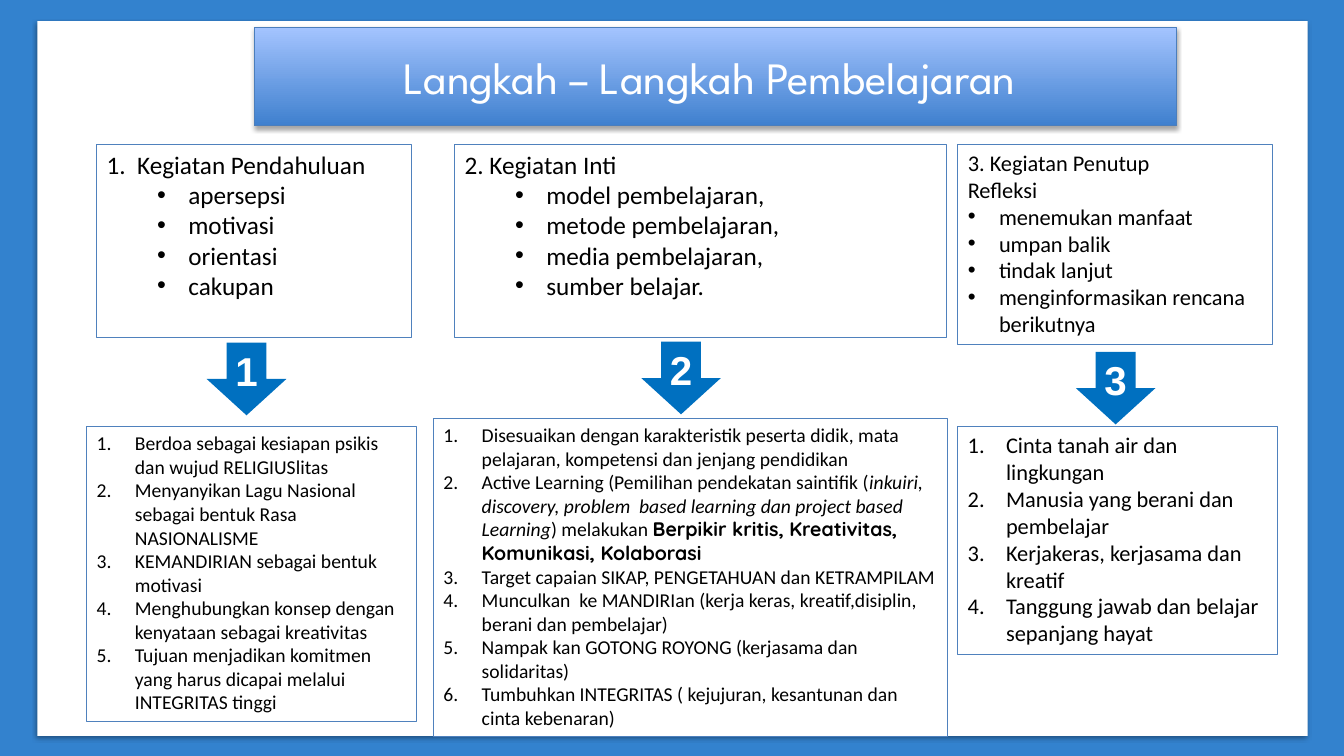
from dataclasses import dataclass

from lxml.etree import SubElement
from pptx import Presentation
from pptx.dml.color import RGBColor
from pptx.enum.shapes import MSO_SHAPE
from pptx.enum.text import MSO_ANCHOR, MSO_AUTO_SIZE, PP_ALIGN
from pptx.oxml.ns import qn
from pptx.util import Inches, Pt


@dataclass(frozen=True)
class Theme:
    back: str = "3382CE"
    white: str = "FFFFFF"
    black: str = "000000"
    edge: str = "4F81BD"
    arrow: str = "0070C0"
    low: str = "3F80CE"
    high: str = "A4C4FF"
    rim: str = "4B7EBC"
    body: str = "Calibri"
    head: str = "League Spartan"
    digit: str = "Arial"
    accent: str = "Quicksand"
    title: float = 32
    number: float = 28.8
    large: float = 18
    medium: float = 16
    small: float = 14
    thin: float = 0.75


THEME = Theme()
BULLET, NUMBER = "buChar", "buAutoNum"

# Each step: arrow place, then two boxes as (place, size, plain lines, items, mark, indent)
STEPS = [
    ((2.05, 3.4), [
        ((0.96, 1.43, 3.12, 1.92), THEME.large, ["1.  Kegiatan Pendahuluan"],
         ["apersepsi", "motivasi", "orientasi", "cakupan"], BULLET, 0.81),
        ((0.86, 4.23, 3.27, 2.93), THEME.small, [],
         ["Berdoa sebagai kesiapan psikis dan wujud RELIGIUSlitas",
          "Menyanyikan Lagu Nasional sebagai bentuk Rasa NASIONALISME",
          "KEMANDIRIAN sebagai bentuk motivasi",
          "Menghubungkan konsep dengan kenyataan sebagai kreativitas",
          "Tujuan menjadikan komitmen yang harus dicapai melalui "
          "INTEGRITAS tinggi"], NUMBER, 0.38),
    ]),
    ((6.36, 3.39), [
        ((4.51, 1.43, 4.88, 1.92), THEME.large, ["2. Kegiatan Inti"],
         ["model pembelajaran,", "metode pembelajaran,",
          "media pembelajaran,", "sumber belajar."], BULLET, 0.81),
        ((4.3, 4.15, 5.1, 3.16), THEME.small, [],
         ["Disesuaikan dengan karakteristik peserta didik, mata pelajaran, "
          "kompetensi dan jenjang pendidikan",
          [("Active Learning (Pemilihan pendekatan saintifik (", ""),
           ("inkuiri, discovery, problem  based learning dan project based "
            "Learning", "italic"),
           (") melakukan ", ""),
           ("Berpikir kritis, Kreativitas, Komunikasi, Kolaborasi", "accent")],
          "Target capaian SIKAP, PENGETAHUAN dan KETRAMPILAM",
          "Munculkan  ke MANDIRIan (kerja keras, kreatif,disiplin, berani "
          "dan pembelajar)",
          "Nampak kan GOTONG ROYONG (kerjasama dan solidaritas)",
          "Tumbuhkan INTEGRITAS ( kejujuran, kesantunan dan cinta "
          "kebenaran)"], NUMBER, 0.38),
    ]),
    ((10.67, 3.49), [
        ((9.5, 1.43, 3.12, 1.99), THEME.medium,
         ["3. Kegiatan Penutup", "Refleksi"],
         ["menemukan manfaat", "umpan balik", "tindak lanjut",
          "menginformasikan rencana berikutnya"], BULLET, 0.31),
        ((9.5, 4.23, 3.17, 2.26), THEME.medium, [],
         ["Cinta tanah air dan lingkungan",
          "Manusia yang berani dan pembelajar",
          "Kerjakeras, kerjasama dan kreatif",
          "Tanggung jawab dan belajar sepanjang hayat"], NUMBER, 0.38),
    ]),
]


def color(code):
    return RGBColor.from_string(code)


def style(font, face, size, code, bold=False):
    font.name = face
    font.size = Pt(size)
    font.color.rgb = color(code)
    font.bold = bold


def outline(shape, code):
    shape.line.color.rgb = color(code)
    shape.line.width = Pt(THEME.thin)


def shade(shape, alpha, dist):
    """Give the shape a soft shadow straight below it."""
    effects = shape._element.spPr.find(qn("a:effectLst"))
    outer = SubElement(effects, qn("a:outerShdw"), blurRad=str(Pt(3.1)),
                       dist=str(Pt(dist)), dir="5400000", rotWithShape="0")
    tint = SubElement(outer, qn("a:srgbClr"), val=THEME.black)
    SubElement(tint, qn("a:alpha"), val=str(alpha * 1000))


def add_form(slide, kind, place):
    shape = slide.shapes.add_shape(kind, *map(Inches, place))
    shape.shadow.inherit = False
    return shape


def label(shape, text, face, size, bold=False):
    frame = shape.text_frame
    frame.vertical_anchor = MSO_ANCHOR.MIDDLE
    frame.text = text
    line = frame.paragraphs[0]
    line.alignment = PP_ALIGN.CENTER
    style(line.runs[0].font, face, size, THEME.white, bold)


def add_sheet(slide):
    sheet = add_form(slide, MSO_SHAPE.RECTANGLE, (0.37, 0.21, 12.6, 7.09))
    sheet.fill.solid()
    sheet.fill.fore_color.rgb = color(THEME.white)
    sheet.line.fill.background()
    shade(sheet, 38, 1.6)


def add_title(slide, text):
    banner = add_form(slide, MSO_SHAPE.RECTANGLE, (2.52, 0.27, 9.15, 0.98))
    banner.fill.gradient()
    banner.fill.gradient_angle = 90
    for stop, code in zip(banner.fill.gradient_stops, (THEME.low, THEME.high)):
        stop.color.rgb = color(code)
    outline(banner, THEME.rim)
    shade(banner, 35, 1.8)
    label(banner, text, THEME.head, THEME.title)


def add_arrow(slide, place, text):
    arrow = add_form(slide, MSO_SHAPE.DOWN_ARROW, (*place, 0.79, 0.72))
    arrow.fill.solid()
    arrow.fill.fore_color.rgb = color(THEME.arrow)
    arrow.line.fill.background()
    frame = arrow.text_frame
    frame.margin_left = frame.margin_right = 0
    frame.margin_top = frame.margin_bottom = 0
    frame.word_wrap = False
    label(arrow, text, THEME.digit, THEME.number, True)


def mark_item(line, mark, indent):
    """Hang the paragraph behind a bullet or an automatic number."""
    hang = 0.38 if mark == NUMBER else 0.31
    props = line._p.get_or_add_pPr()
    props.set("marL", str(Inches(indent)))
    props.set("indent", str(-Inches(hang)))
    if mark == NUMBER:
        SubElement(props, qn("a:buFont"), typeface="+mj-lt")
        SubElement(props, qn("a:buAutoNum"), type="arabicPeriod")
    else:
        SubElement(props, qn("a:buFont"), typeface=THEME.digit)
        SubElement(props, qn("a:buChar"), char="•")


def write(line, parts, size):
    """Fill a paragraph from plain text or from (text, look) pairs."""
    for text, look in [(parts, "")] if isinstance(parts, str) else parts:
        run = line.add_run()
        run.text = text
        strong = look == "accent"
        face = THEME.accent if strong else THEME.body
        style(run.font, face, size, THEME.black, strong)
        run.font.italic = look == "italic"


def add_box(slide, place, size, heads, items, mark, indent):
    box = slide.shapes.add_textbox(*map(Inches, place))
    outline(box, THEME.edge)
    frame = box.text_frame
    frame.word_wrap = True
    frame.auto_size = MSO_AUTO_SIZE.NONE
    for index, parts in enumerate(heads + items):
        line = frame.add_paragraph() if index else frame.paragraphs[0]
        if index >= len(heads):
            line.level = 1 if indent > 0.5 else 0
            mark_item(line, mark, indent)
        write(line, parts, size)


def main():
    deck = Presentation()
    deck.slide_width, deck.slide_height = Inches(13.33), Inches(7.5)
    slide = deck.slides.add_slide(deck.slide_layouts[6])
    slide.background.fill.solid()
    slide.background.fill.fore_color.rgb = color(THEME.back)
    add_sheet(slide)
    add_title(slide, "Langkah – Langkah Pembelajaran ")
    for count, (place, boxes) in enumerate(STEPS, 1):
        for box in boxes:
            add_box(slide, *box)
        add_arrow(slide, place, str(count))
    deck.save("out.pptx")


if __name__ == "__main__":
    main()
